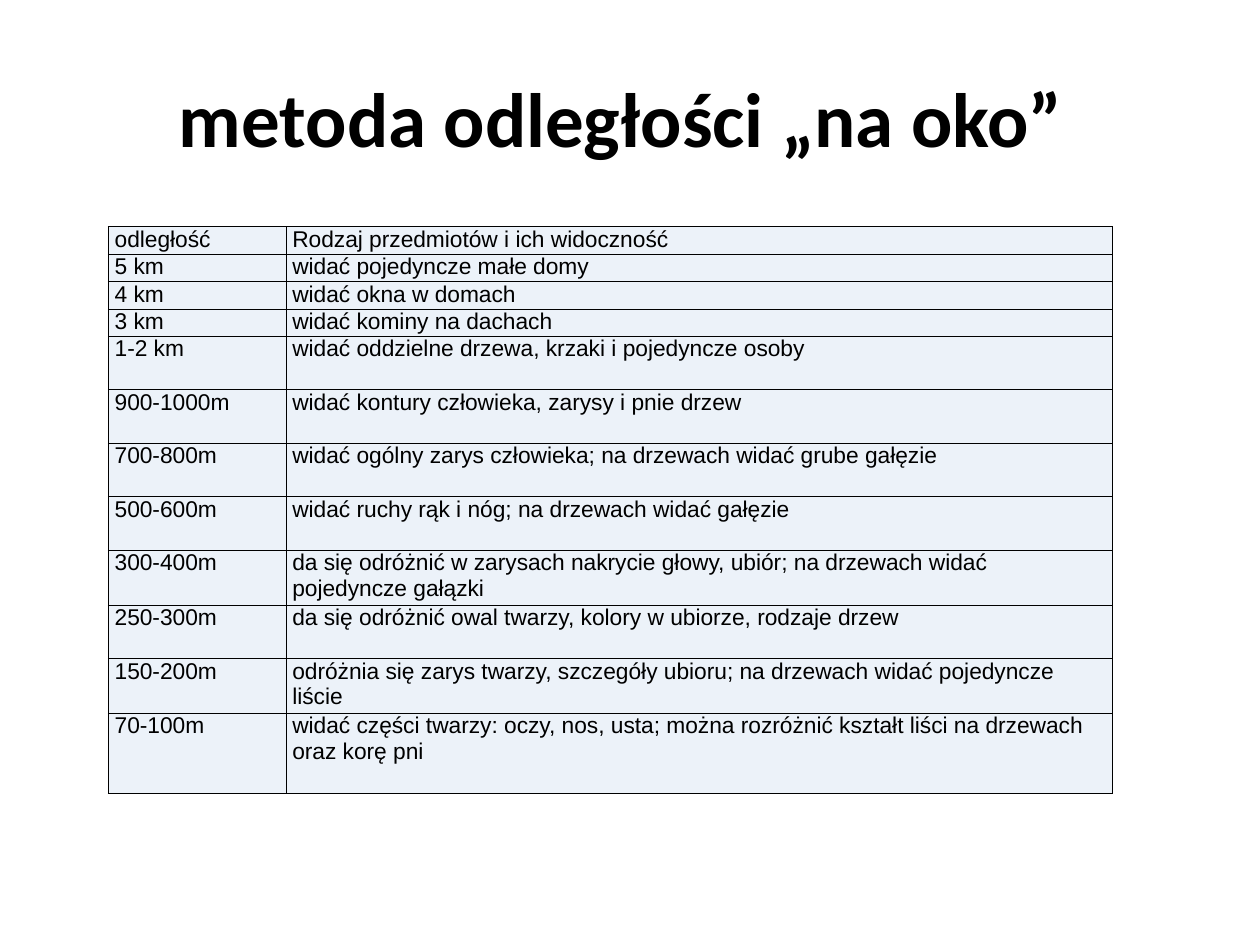
"""Build a slide with a table for judging distance by eye."""
import pptx
import pptx.dml.color
import pptx.enum.text
import pptx.oxml
import pptx.oxml.ns
import pptx.util

BLACK = pptx.dml.color.RGBColor(0x00, 0x00, 0x00)
PALE_BLUE = pptx.dml.color.RGBColor(0xEC, 0xF2, 0xF9)

ROWS = [
    (1, "odległość", "Rodzaj przedmiotów i ich widoczność"),
    (1, "5 km", "widać pojedyncze małe domy"),
    (1, "4 km", "widać okna w domach"),
    (1, "3 km", "widać kominy na dachach"),
    (2, "1-2 km", "widać oddzielne drzewa, krzaki i pojedyncze osoby"),
    (2, "900-1000m", "widać kontury człowieka, zarysy i pnie drzew"),
    (2, "700-800m", "widać ogólny zarys człowieka; na drzewach widać grube gałęzie"),
    (2, "500-600m", "widać ruchy rąk i nóg; na drzewach widać gałęzie"),
    (2, "300-400m", "da się odróżnić w zarysach nakrycie głowy, ubiór; na drzewach widać pojedyncze gałązki"),
    (2, "250-300m", "da się odróżnić owal twarzy, kolory w ubiorze, rodzaje drzew"),
    (2, "150-200m", "odróżnia się zarys twarzy, szczegóły ubioru; na drzewach widać pojedyncze liście"),
    (3, "70-100m", "widać części twarzy: oczy, nos, usta; można rozróżnić kształt liści na drzewach oraz korę pni"),
]


def set_font(p, name, size, bold=False):
    p.font.name = name
    p.font.size = pptx.util.Pt(size)
    p.font.bold = bold
    p.font.color.rgb = BLACK


def add_borders(cell):
    tcPr = cell._tc.get_or_add_tcPr()
    for i, side in enumerate("LRTB"):
        tcPr.insert(i, pptx.oxml.parse_xml(
            f'<a:ln{side} {pptx.oxml.ns.nsdecls("a")} w="{pptx.util.Pt(0.5)}">'
            f'<a:solidFill><a:srgbClr val="{BLACK}"/></a:solidFill></a:ln{side}>'))


prs = pptx.Presentation()
prs.slide_width = pptx.util.Inches(10)
prs.slide_height = pptx.util.Inches(7.5)
W, H = prs.slide_width, prs.slide_height
s = prs.slides.add_slide(prs.slide_layouts[6])

sp = s.shapes.add_textbox(int(W * 0.05), int(H * 0.04), int(W * 0.9), int(H / 6))
tf = sp.text_frame
tf.word_wrap = True
tf.vertical_anchor = pptx.enum.text.MSO_ANCHOR.MIDDLE
p = tf.paragraphs[0]
p.text = "metoda odległości „na oko” "
p.alignment = pptx.enum.text.PP_ALIGN.CENTER
set_font(p, "Calibri", 44, True)

table_width, table_height = pptx.util.Inches(7.97), pptx.util.Inches(4.46)
line_height = table_height / sum(lines for lines, *texts in ROWS)
table = s.shapes.add_table(len(ROWS), 2, pptx.util.Inches(0.86), int(H * 0.24),
                           table_width, table_height).table
table.first_row = table.horz_banding = False
table.columns[0].width = pptx.util.Inches(1.41)
table.columns[1].width = table_width - table.columns[0].width

for row, (lines, *texts) in zip(table.rows, ROWS):
    row.height = int(lines * line_height)
    for cell, text in zip(row.cells, texts):
        cell.margin_left = cell.margin_right = pptx.util.Inches(0.05)
        cell.margin_top = cell.margin_bottom = 0
        cell.fill.solid()
        cell.fill.fore_color.rgb = PALE_BLUE
        add_borders(cell)
        p = cell.text_frame.paragraphs[0]
        p.text = text
        set_font(p, "Arial", 13)

prs.save("out.pptx")
